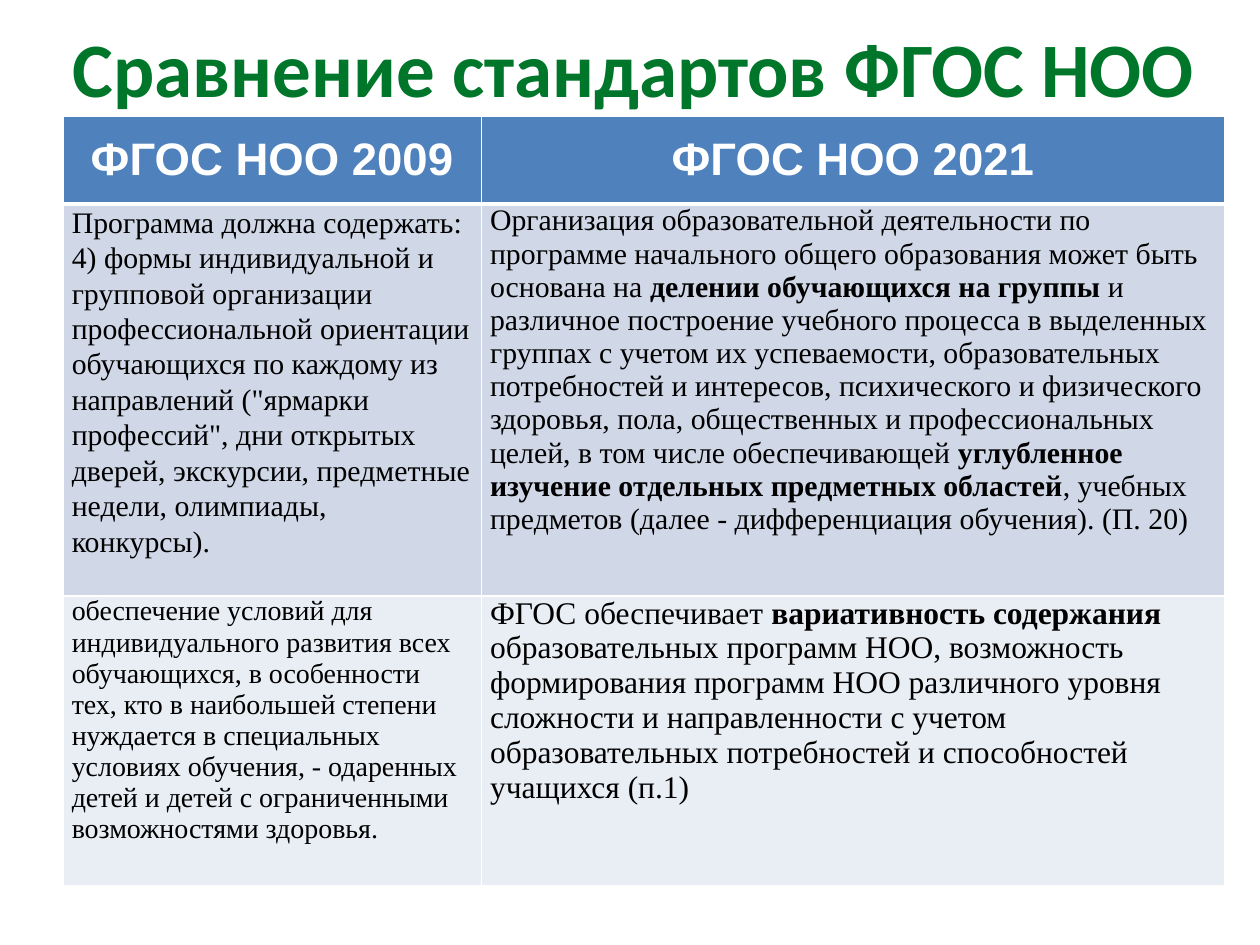
from lxml.etree import SubElement
from pptx import Presentation
from pptx.dml.color import RGBColor
from pptx.enum.text import MSO_ANCHOR as Anchor, PP_ALIGN as Align
from pptx.oxml.ns import qn
from pptx.util import Inches, Pt

GREEN = RGBColor(0x00, 0x76, 0x2A)
BLUE = RGBColor(0x4F, 0x81, 0xBD)
PALE_BLUE = RGBColor(0xD0, 0xD8, 0xE8)
LIGHT_BLUE = RGBColor(0xE9, 0xED, 0xF4)
WHITE = RGBColor(0xFF, 0xFF, 0xFF)
BLACK = RGBColor(0x00, 0x00, 0x00)

COLUMNS = (3.32, 5.9)
ROWS = (0.7, 3.11, 2.3)
HEADINGS = ("ФГОС НОО 2009", "ФГОС НОО 2021")
HEADING_FONT = {"name": "Arial", "size": Pt(26)}
BODY_FONT = "Times New Roman"

COMPARISON = (
    (PALE_BLUE, (
        (17, 1.07, (
            ('Программа должна содержать: 4) формы индивидуальной и групповой '
             'организации профессиональной ориентации обучающихся по каждому из '
             'направлений ("ярмарки профессий", дни открытых дверей, экскурсии, '
             'предметные недели, олимпиады, конкурсы).', False),)),
        (17, 1.0, (
            ("Организация образовательной деятельности по программе начального "
             "общего образования может быть основана на ", False),
            ("делении обучающихся на группы ", True),
            ("и различное построение учебного процесса в выделенных группах с "
             "учетом их успеваемости, образовательных потребностей и интересов, "
             "психического и физического здоровья, пола, общественных и "
             "профессиональных целей, в том числе обеспечивающей ", False),
            ("углубленное изучение отдельных предметных областей", True),
            (", учебных предметов (далее - дифференциация обучения). (П. 20)",
             False))))),
    (LIGHT_BLUE, (
        (16, 1.0, (
            ("обеспечение условий для индивидуального развития всех обучающихся, "
             "в особенности тех, кто в наибольшей степени нуждается в специальных "
             "условиях обучения, - одаренных детей и детей с ограниченными "
             "возможностями здоровья.", False),)),
        (18, 1.0, (
            ("ФГОС обеспечивает ", False),
            ("вариативность содержания ", True),
            ("образовательных программ НОО, возможность формирования программ НОО "
             "различного уровня сложности и направленности с учетом "
             "образовательных потребностей и способностей учащихся (п.1)",
             False))))),
)


def set_all(target, values):
    """Set every attribute in a dict of format values."""
    for attribute, value in values.items():
        setattr(target, attribute, value)


def add_run(paragraph, text, color, **font):
    """Append a formatted run to a paragraph."""
    run = paragraph.add_run()
    run.text = text
    set_all(run.font, font)
    run.font.color.rgb = color


def add_title(slide, text):
    """Add the centred slide title."""
    title = slide.shapes.add_textbox(*map(Inches, (0.35, 0.3, 9.37, 0.46)))
    set_all(title.text_frame, {"word_wrap": True, "vertical_anchor": Anchor.MIDDLE})
    paragraph = title.text_frame.paragraphs[0]
    paragraph.alignment = Align.CENTER
    add_run(paragraph, text, GREEN, name="Calibri", size=Pt(44), bold=True)


def paint_cell(cell, color, top=1, bottom=1):
    """Give a cell white borders and a solid fill."""
    properties = cell._tc.get_or_add_tcPr()
    for side, width in {"L": 1, "R": 1, "T": top, "B": bottom}.items():
        border = SubElement(properties, qn(f"a:ln{side}"), w=str(Pt(width)))
        solid = SubElement(border, qn("a:solidFill"))
        SubElement(solid, qn("a:srgbClr"), val=str(WHITE))
    cell.fill.solid()
    cell.fill.fore_color.rgb = color


def fill_heading(cell, text):
    """Write a column heading."""
    paint_cell(cell, BLUE, bottom=3)
    cell.vertical_anchor = Anchor.MIDDLE
    paragraph = cell.text_frame.paragraphs[0]
    paragraph.alignment = Align.CENTER
    add_run(paragraph, text, WHITE, bold=True, **HEADING_FONT)


def fill_body(cell, color, top, size, spacing, pieces):
    """Write a body cell from plain and bold pieces."""
    paint_cell(cell, color, top=top)
    set_all(cell, {"margin_left": Inches(0.07), "margin_right": Inches(0.07),
                   "margin_top": 0, "margin_bottom": 0})
    paragraph = cell.text_frame.paragraphs[0]
    paragraph.line_spacing = spacing
    for text, bold in pieces:
        add_run(paragraph, text, BLACK, name=BODY_FONT, size=Pt(size), bold=bold)


def add_comparison(slide):
    """Add the table that compares the two standards."""
    frame = slide.shapes.add_table(len(ROWS), len(COLUMNS), Inches(0.5), Inches(0.92),
                                   Inches(sum(COLUMNS)), Inches(sum(ROWS)))
    table = frame.table
    for column, width in zip(table.columns, COLUMNS):
        column.width = Inches(width)
    for row, height in zip(table.rows, ROWS):
        row.height = Inches(height)
    for column, heading in enumerate(HEADINGS):
        fill_heading(table.cell(0, column), heading)
    for row, (color, passages) in enumerate(COMPARISON, start=1):
        for column, passage in enumerate(passages):
            fill_body(table.cell(row, column), color, 3 if row == 1 else 1, *passage)


def main():
    """Build and save the slide."""
    deck = Presentation()
    set_all(deck, {"slide_width": Inches(10), "slide_height": Inches(7.5)})
    slide = deck.slides.add_slide(deck.slide_layouts[6])
    add_title(slide, "Сравнение стандартов ФГОС НОО")
    add_comparison(slide)
    deck.save("out.pptx")


if __name__ == "__main__":
    main()
